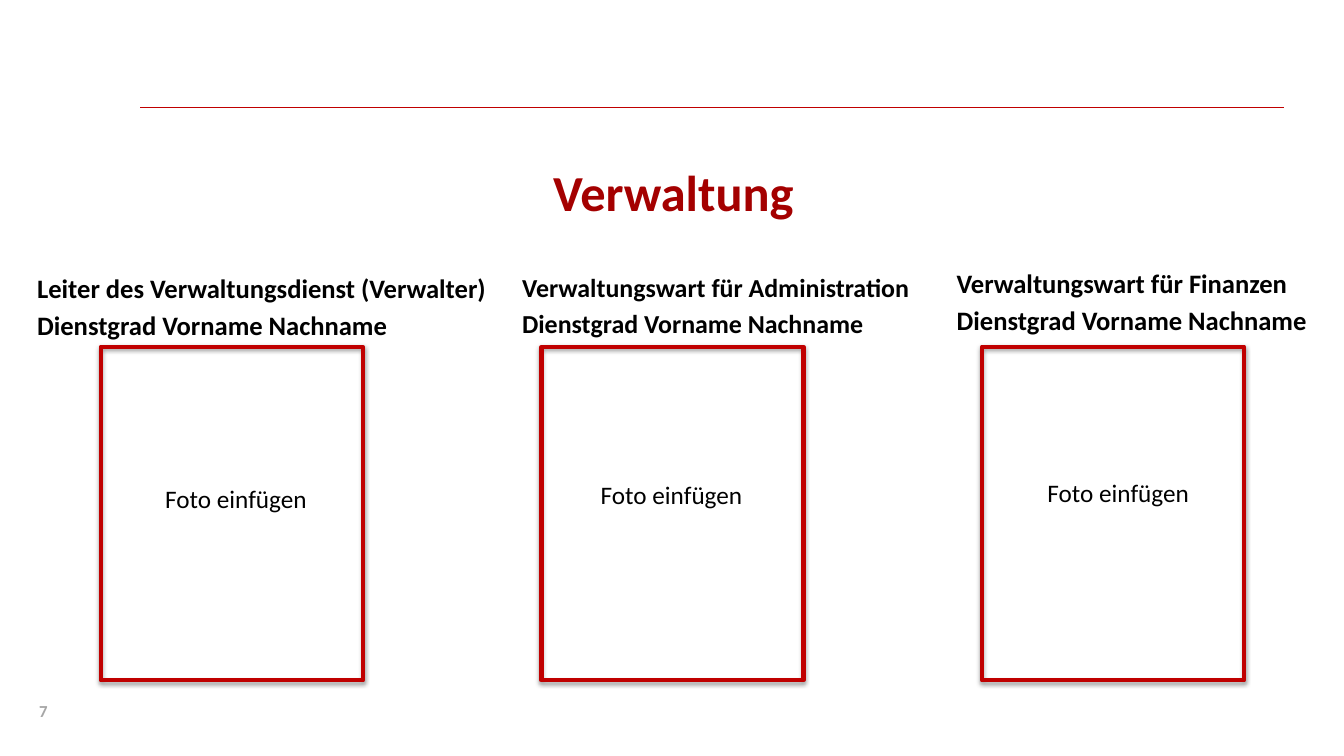
from lxml.etree import SubElement
from pptx import Presentation
from pptx.dml.color import RGBColor
from pptx.enum.shapes import MSO_CONNECTOR, MSO_SHAPE
from pptx.enum.text import MSO_ANCHOR, PP_ALIGN
from pptx.oxml.ns import qn
from pptx.util import Inches, Pt

RED = RGBColor(0xC0, 0x00, 0x00)
DARK_RED = RGBColor(0xA4, 0x00, 0x00)
GREY = RGBColor(0xA6, 0xA6, 0xA6)
BLACK = RGBColor(0x00, 0x00, 0x00)

NAME_LINE = "Dienstgrad Vorname Nachname"
PHOTO_LEFT, PHOTO_TOP, COLUMN_STEP = 1.0, 3.44, 4.37
PHOTO_WIDTH, PHOTO_HEIGHT = 2.6, 3.31

# Role, text size, heading (left, top, width), photo label (left, top)
OFFICES = [
    ("Leiter des Verwaltungsdienst (Verwalter)", 19, (0.27, 2.64, 5.89), (1.54, 4.75)),
    ("Verwaltungswart für Administration", 18.5, (5.08, 2.62, 5.36), (5.86, 4.71)),
    ("Verwaltungswart für Finanzen", 19, (9.39, 2.59, 3.94), (10.29, 4.69)),
]


def write(frame, text, size, color, bold=False, align=PP_ALIGN.LEFT):
    frame.text = text
    for index, para in enumerate(frame.paragraphs):
        para.alignment = align
        if index:
            para.space_before = Pt(size * 0.2)
        for span in para.runs:
            span.font.name = "Calibri"
            span.font.size = Pt(size)
            span.font.bold = bold
            span.font.color.rgb = color


def add_text(page, box, text, size, color, bold=False, anchor=MSO_ANCHOR.TOP, wrap=True):
    frame = page.shapes.add_textbox(*map(Inches, box)).text_frame
    frame.word_wrap = wrap
    frame.vertical_anchor = anchor
    write(frame, text, size, color, bold)


def add_header(page):
    # Rule across the top
    rule = page.shapes.add_connector(
        MSO_CONNECTOR.STRAIGHT, Inches(12.73), Inches(1.07), Inches(1.39), Inches(1.07))
    rule.line.color.rgb = RED
    rule.line.width = Pt(0.75)
    SubElement(rule._element.spPr, qn("a:effectLst"))

    # Title
    title = page.shapes.title
    title.left, title.top, title.width, title.height = map(Inches, (0.68, 1.39, 12, 1.02))
    title.text_frame.vertical_anchor = MSO_ANCHOR.MIDDLE
    write(title.text_frame, "Verwaltung", 36, DARK_RED, True, PP_ALIGN.CENTER)


def add_photo_frame(page, box):
    photo = page.shapes.add_shape(MSO_SHAPE.RECTANGLE, *map(Inches, box))
    photo.fill.background()
    photo.line.color.rgb = RED
    photo.line.width = Pt(3)
    # Soft shadow straight below
    photo.shadow.inherit = False
    effects = photo._element.spPr.find(qn("a:effectLst"))
    shadow = SubElement(effects, qn("a:outerShdw"), blurRad=str(Pt(3.1)),
                        dist=str(Pt(1.6)), dir="5400000", rotWithShape="0")
    shade = SubElement(shadow, qn("a:srgbClr"), val=str(BLACK))
    SubElement(shade, qn("a:alpha"), val="38000")


def add_office(page, photo_box, role, size, heading, label):
    add_text(page, (*heading, 0.79), f"{role}\n{NAME_LINE}", size, BLACK,
             bold=True, anchor=MSO_ANCHOR.BOTTOM)
    add_text(page, (*label, 1.62, 0.4), "Foto einfügen", 18, BLACK, wrap=False)
    add_photo_frame(page, photo_box)


def main():
    deck = Presentation()
    deck.slide_width, deck.slide_height = Inches(13.33), Inches(7.5)
    page = deck.slides.add_slide(deck.slide_layouts[5])

    add_header(page)
    for column, office in enumerate(OFFICES):
        left = PHOTO_LEFT + column * COLUMN_STEP
        add_office(page, (left, PHOTO_TOP, PHOTO_WIDTH, PHOTO_HEIGHT), *office)

    # Page number
    add_text(page, (0.29, 6.9, 2.6, 0.3), "7", 12, GREY, bold=True)
    deck.save("out.pptx")


if __name__ == "__main__":
    main()
